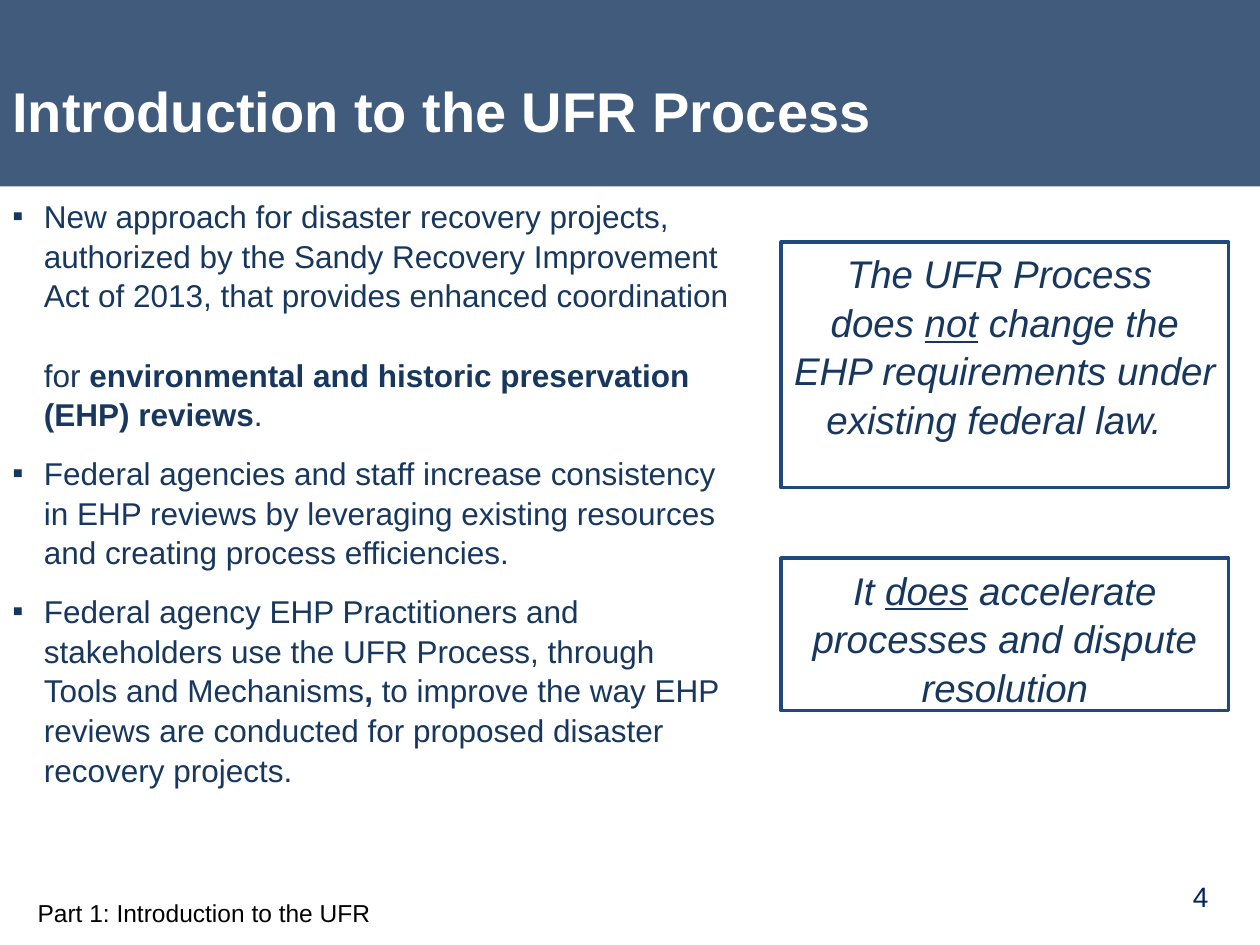
from pptx import Presentation
from pptx.dml.color import RGBColor
from pptx.enum.shapes import MSO_SHAPE as Shape
from pptx.enum.text import MSO_ANCHOR as Anchor, PP_ALIGN as Align
from pptx.oxml.ns import qn
from pptx.util import Inches, Pt
from lxml.etree import SubElement

NAVY, BLUE, WHITE, BLACK = "17375E", "1F497D", "FFFFFF", "000000"
NUMBER_BLUE = "002360"


def color(hex_string):
    return RGBColor.from_string(hex_string)


class SlideBuilder:
    """Holds the style and the current slide; lengths are shares of the slide."""
    font = "Arial"
    line_spacing = 1.05

    def __init__(self, deck):
        self.deck = deck
        self.page = deck.slides.add_slide(deck.slide_layouts[6])

    def place(self, left, top, width, height):
        wide, high = self.deck.slide_width, self.deck.slide_height
        return [int(share * side) for share, side in
                zip((left, top, width, height), (wide, high, wide, high))]

    def rectangle(self, area):
        box = self.page.shapes.add_shape(Shape.RECTANGLE, *self.place(*area))
        box.shadow.inherit = False
        return box

    def band(self, area, fill, opacity):
        box = self.rectangle(area)
        box.line.fill.background()
        box.fill.solid()
        box.fill.fore_color.rgb = color(fill)
        tint = box._element.spPr.find(".//" + qn("a:srgbClr"))
        SubElement(tint, qn("a:alpha"), val=str(opacity * 1000))

    def fill_text(self, box, paragraphs, size, ink, align=Align.LEFT,
                  anchor=Anchor.TOP, italic=False, bullet=None, gap=0):
        """Each paragraph is a list of (text, marks); marks: b bold, u underlined."""
        frame = box.text_frame
        frame.word_wrap = True
        frame.vertical_anchor = anchor
        for index, runs in enumerate(paragraphs):
            para = frame.add_paragraph() if index else frame.paragraphs[0]
            para.alignment = align
            para.line_spacing = self.line_spacing
            para.space_before = Pt(gap if index else 0)
            if bullet:
                self.bullet(para, bullet)
            for text, marks in runs:
                for line, part in enumerate(text.split("\n")):
                    if line:
                        para.add_line_break()
                    span = para.add_run()
                    span.text = part
                    span.font.name = self.font
                    span.font.size = Pt(size)
                    span.font.color.rgb = color(ink)
                    span.font.bold = "b" in marks
                    span.font.underline = "u" in marks
                    span.font.italic = italic

    def bullet(self, para, sign):
        props = para._p.get_or_add_pPr()
        indent = Inches(0.25)
        props.set("marL", str(indent))
        props.set("indent", str(-indent))
        SubElement(props, qn("a:buFont"), typeface=self.font)
        SubElement(props, qn("a:buChar"), char=sign)

    def text(self, area, paragraphs, size, ink, **style):
        box = self.page.shapes.add_textbox(*self.place(*area))
        self.fill_text(box, paragraphs, size, ink, **style)
        return box

    def callout(self, area, runs):
        box = self.rectangle(area)
        box.fill.background()
        box.line.color.rgb = color(BLUE)
        box.line.width = Pt(2)
        self.fill_text(box, [runs], 22, NAVY, align=Align.CENTER, italic=True)


def main():
    deck = Presentation()
    deck.slide_width, deck.slide_height = Inches(10), Inches(7.5)
    slide = SlideBuilder(deck)

    # Title band
    header = (0, 0, 1, 1.48 / 7.5)
    slide.band(header, NAVY, 82)
    title = slide.text(header, [[("Introduction to the UFR Process", "b")]], 32, WHITE)
    title.text_frame.margin_top = Inches(0.58)

    # Bullet list
    points = [
        [("New approach for disaster recovery projects, authorized by the Sandy "
          "Recovery Improvement Act of 2013, that provides enhanced coordination \nfor ", ""),
         ("environmental and historic preservation (EHP) reviews", "b"), (".", "")],
        [("Federal agencies and staff increase consistency in EHP reviews by "
          "leveraging existing resources and creating process efficiencies.", "")],
        [("Federal agency EHP Practitioners and stakeholders use the UFR Process, "
          "through Tools and Mechanisms", ""), (",", "b"),
         (" to improve the way EHP reviews are conducted for proposed disaster "
          "recovery projects.", "")],
    ]
    slide.text((0, 0.2, 0.591, 0.8), points, 18, NAVY, bullet="▪", gap=10.8)

    # Callouts in the right column
    left, width = 0.62, 0.355
    slide.callout((left, 1.92 / 7.5, width, 0.26),
                  [("The UFR Process \ndoes ", ""), ("not", "u"),
                   (" change the EHP requirements under existing federal law.  ", "")])
    slide.callout((left, 4.43 / 7.5, width, 1.21 / 7.5),
                  [("It ", ""), ("does", "u"),
                   (" accelerate processes and dispute resolution", "")])

    # Footer and page number
    slide.text((0.02, 7.07 / 7.5, 0.667, 0.34 / 7.5),
               [[("Part 1: Introduction to the UFR", "")]], 14, BLACK)
    number = slide.text((0.638, 0.924, 0.321, 0.37 / 7.5), [[("4", "")]], 16,
                        NUMBER_BLUE, align=Align.RIGHT, anchor=Anchor.BOTTOM)
    number.text_frame.margin_left = number.text_frame.margin_right = 0

    deck.save("out.pptx")


if __name__ == "__main__":
    main()
